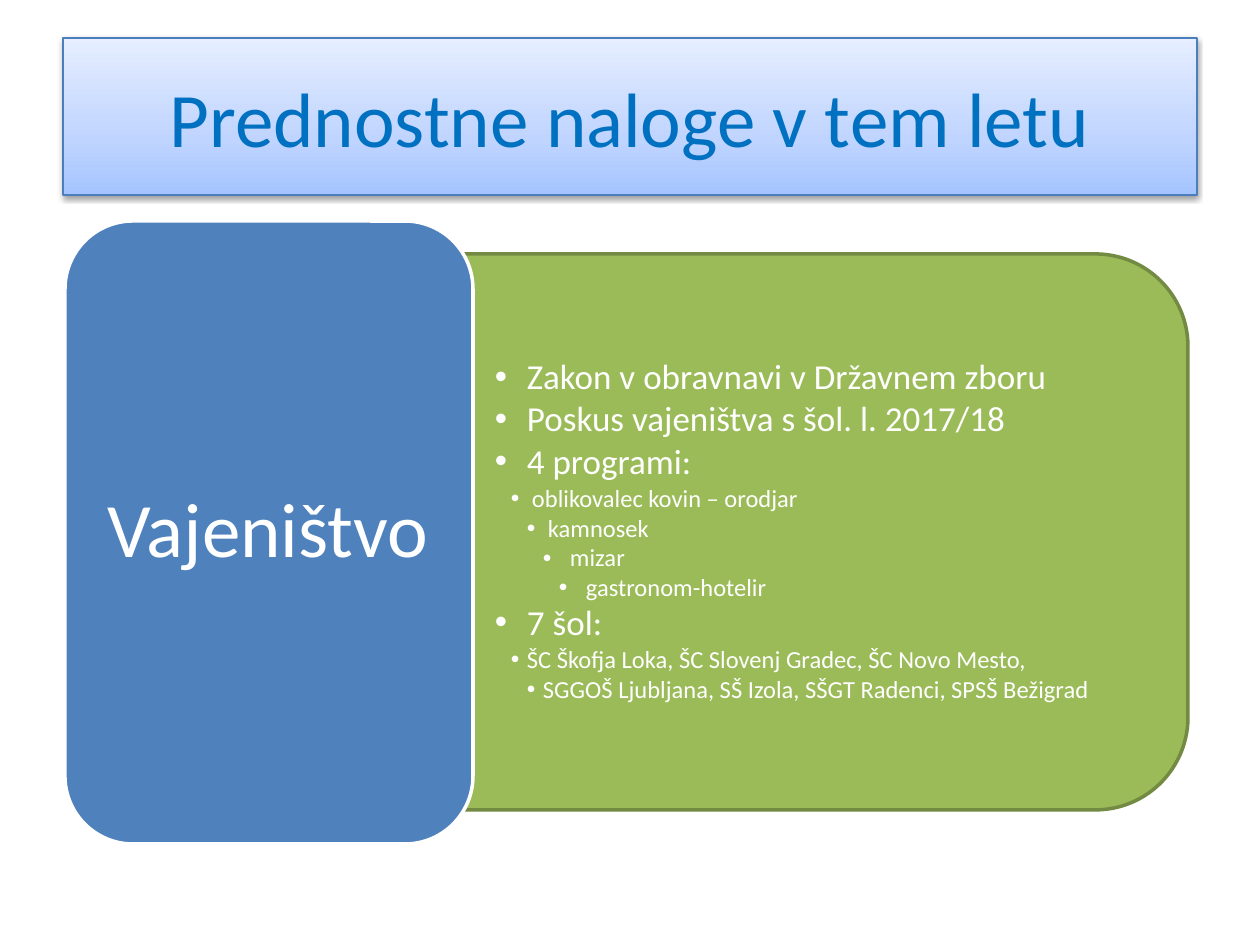
from copy import deepcopy

from lxml import etree
from pptx import Presentation
from pptx.dml.color import RGBColor
from pptx.enum.shapes import MSO_SHAPE
from pptx.enum.text import MSO_ANCHOR, PP_ALIGN
from pptx.oxml.ns import qn
from pptx.util import Emu, Pt

PIXEL = 914400 // 126
RECTANGLE = MSO_SHAPE.RECTANGLE
ROUNDED = MSO_SHAPE.ROUNDED_RECTANGLE
ROUND_TOP = MSO_SHAPE.ROUND_2_SAME_RECTANGLE
MIDDLE = MSO_ANCHOR.MIDDLE
LEFT, CENTER = PP_ALIGN.LEFT, PP_ALIGN.CENTER

WHITE = RGBColor(0xFF, 0xFF, 0xFF)
BLUE = RGBColor(0x4F, 0x81, 0xBD)
TITLE_BLUE = RGBColor(0x00, 0x70, 0xC0)
TITLE_EDGE = RGBColor(0x4B, 0x7E, 0xBC)
GREEN = RGBColor(0x9B, 0xBB, 0x59)
GREEN_EDGE = RGBColor(0x73, 0x8A, 0x42)
TITLE_GRADIENT = [
    (0, RGBColor(0xA4, 0xC4, 0xFF)),
    (0.35, RGBColor(0xBF, 0xD4, 0xFF)),
    (1, RGBColor(0xE6, 0xEE, 0xFF)),
]

LEVEL_STEP = 16
# Text, level, distance from bullet to text
TASKS = [
    ("Zakon v obravnavi v Državnem zboru", 0, 32),
    ("Poskus vajeništva s šol. l. 2017/18", 0, 32),
    ("4 programi:", 0, 32),
    ("oblikovalec kovin – orodjar", 1, 21),
    ("kamnosek", 2, 21),
    ("mizar", 3, 27),
    ("gastronom-hotelir", 4, 27),
    ("7 šol:", 0, 32),
    ("ŠC Škofja Loka, ŠC Slovenj Gradec, ŠC Novo Mesto,", 1, 16),
    ("SGGOŠ Ljubljana, SŠ Izola, SŠGT Radenci, SPSŠ Bežigrad", 2, 16),
]


def px(length):
    return Emu(length * PIXEL)


def set_values(target, values):
    for name, value in values.items():
        setattr(target, name, value)


class SlideBuilder:
    def __init__(self, slide, font_name):
        self.slide = slide
        self.font_name = font_name

    def shape(self, kind, box, line_color, line_width, fill=None):
        shape = self.slide.shapes.add_shape(kind, *map(px, box))
        shape.shadow.inherit = False
        if fill is not None:
            shape.fill.solid()
            shape.fill.fore_color.rgb = fill
        shape.line.color.rgb = line_color
        shape.line.width = Pt(line_width)
        return shape

    def gradient(self, shape, stops):
        """Fill from bottom to top with two or more stops."""
        shape.fill.gradient()
        shape.fill.gradient_angle = 90
        stop_list = shape.element.spPr.find(qn("a:gradFill")).find(qn("a:gsLst"))
        while len(stop_list) < len(stops):
            stop_list.append(deepcopy(stop_list[0]))
        for stop, (position, color) in zip(shape.fill.gradient_stops, stops):
            stop.position = position
            stop.color.rgb = color

    def drop_shadow(self, shape, blur, distance, opacity):
        effects = shape.element.spPr.find(qn("a:effectLst"))
        shadow = etree.SubElement(
            effects, qn("a:outerShdw"), blurRad=str(Pt(blur)),
            dist=str(Pt(distance)), dir="5400000", rotWithShape="0")
        color = etree.SubElement(shadow, qn("a:srgbClr"), val="000000")
        etree.SubElement(color, qn("a:alpha"), val=str(opacity * 1000))

    def text_box(self, box, inset_x, inset_y):
        text_box = self.slide.shapes.add_textbox(*map(px, box))
        set_values(text_box.text_frame, {
            "word_wrap": True, "vertical_anchor": MIDDLE,
            "margin_left": px(inset_x), "margin_right": px(inset_x),
            "margin_top": px(inset_y), "margin_bottom": px(inset_y),
        })
        return text_box

    def add_text(self, paragraph, text, size, color, **layout):
        set_values(paragraph, layout)
        run = paragraph.add_run()
        run.text = text
        set_values(run.font, {"name": self.font_name, "size": Pt(size)})
        run.font.color.rgb = color

    def bullets(self, text_frame, items):
        for index, (text, level, hanging) in enumerate(items):
            paragraph = text_frame.add_paragraph() if index else text_frame.paragraphs[0]
            properties = paragraph._p.get_or_add_pPr()
            properties.set("marL", str(px(level * LEVEL_STEP + hanging)))
            properties.set("indent", str(px(-hanging)))
            etree.SubElement(properties, qn("a:buFont"), typeface="Arial")
            etree.SubElement(properties, qn("a:buChar"), char="•")
            size = 14 if level else 20
            self.add_text(paragraph, text, size, WHITE, alignment=LEFT, level=level,
                          line_spacing=0.9, space_after=Pt(size * 0.13))


def main():
    presentation = Presentation()
    presentation.slide_width = px(1260)
    presentation.slide_height = px(945)
    slide = presentation.slides.add_slide(presentation.slide_layouts[6])
    builder = SlideBuilder(slide, "Calibri")

    title = builder.shape(RECTANGLE, (63, 38, 1134, 157), TITLE_EDGE, 0.75)
    builder.gradient(title, TITLE_GRADIENT)
    builder.drop_shadow(title, 3.1, 1.6, 38)
    title.text_frame.vertical_anchor = MIDDLE
    builder.add_text(title.text_frame.paragraphs[0], "Prednostne naloge v tem letu",
                     44, TITLE_BLUE, alignment=CENTER)

    panel = builder.shape(ROUND_TOP, (547, 169, 556, 726), GREEN_EDGE, 2, GREEN)
    panel.rotation = 90
    tasks = builder.text_box((461, 281, 698, 501), 34, 17)
    builder.bullets(tasks.text_frame, TASKS)

    builder.shape(ROUNDED, (65, 221, 408, 623), WHITE, 2, BLUE)
    topic = builder.text_box((84, 241, 368, 583), 23, 11)
    builder.add_text(topic.text_frame.paragraphs[0], "Vajeništvo", 44, WHITE,
                     alignment=CENTER, line_spacing=0.9)

    presentation.save("out.pptx")


if __name__ == "__main__":
    main()
